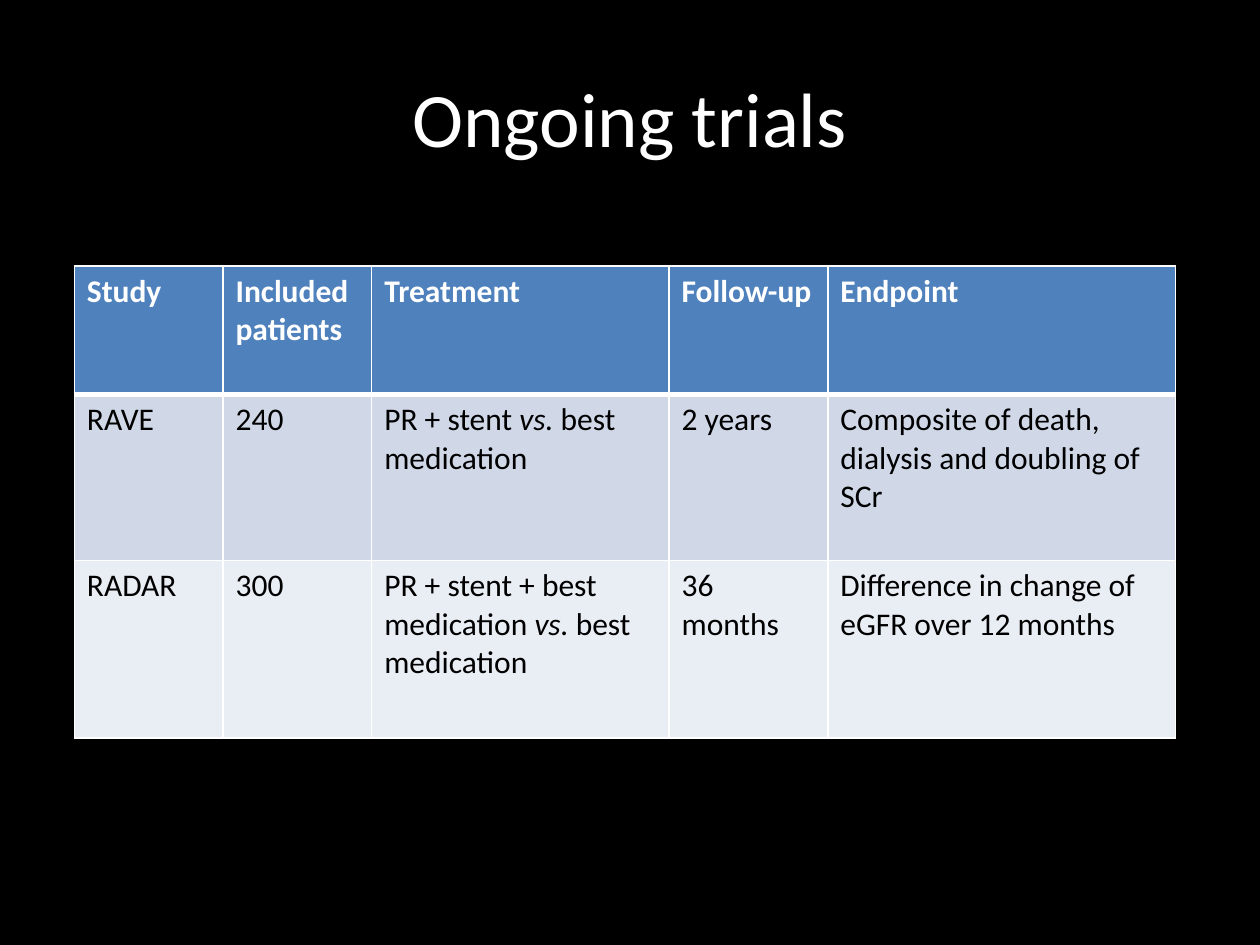
from lxml.etree import SubElement as Sub
from pptx import Presentation
from pptx.dml.color import RGBColor
from pptx.enum.text import MSO_ANCHOR as Anchor, PP_ALIGN as Align
from pptx.oxml.ns import qn
from pptx.util import Inches, Pt


def paint(fill, tone):
    fill.solid()
    fill.fore_color.rgb = RGBColor.from_string(tone)


def add_run(para, text, size, tone, bold=False, slant=False):
    run = para.add_run()
    run.text = text
    font = run.font
    font.name, font.size = "Calibri", Pt(size)
    font.bold, font.italic = bold, slant
    paint(font.fill, tone)


deck = Presentation()
deck.slide_width, deck.slide_height = Inches(10), Inches(7.5)
slide = deck.slides.add_slide(deck.slide_layouts[5])
paint(slide.background.fill, "000000")

title = slide.shapes.title
title.left, title.top = Inches(0.5), Inches(0.3)
title.width, title.height = Inches(9), Inches(1.25)
title.text_frame.vertical_anchor = Anchor.MIDDLE
head = title.text_frame.paragraphs[0]
head.alignment = Align.CENTER
add_run(head, "Ongoing trials", 44, "FFFFFF")

# Each cell is a list of runs; odd runs are italic.
rows = [
    [["Study"], ["Included patients"], ["Treatment"], ["Follow-up"], ["Endpoint"]],
    [["RAVE"], ["240"], ["PR + stent ", "vs.", " best medication"], ["2 years"],
     ["Composite of death, dialysis and doubling of SCr"]],
    [["RADAR"], ["300"],
     ["PR + stent + best medication ", "vs. ", "best medication"], ["36 months"],
     ["Difference in change of eGFR over 12 months"]],
]
wides = [1.18, 1.18, 2.36, 1.26, 2.76]
highs = [1.02, 1.32, 1.41]
fills = ["4F81BD", "D0D8E8", "E9EDF4"]

table = slide.shapes.add_table(
    len(rows), len(wides), Inches(0.59), Inches(2.11),
    Inches(sum(wides)), Inches(sum(highs))).table
for col, wide in zip(table.columns, wides):
    col.width = Inches(wide)
for row, high in zip(table.rows, highs):
    row.height = Inches(high)

for r, row in enumerate(rows):
    for c, parts in enumerate(row):
        cell = table.cell(r, c)
        para = cell.text_frame.paragraphs[0]
        for n, part in enumerate(parts):
            add_run(para, part, 18, "000000" if r else "FFFFFF",
                    bold=r == 0, slant=n % 2 == 1)
        props = cell._tc.get_or_add_tcPr()
        for side in "LRTB":
            thick = (r, side) in [(0, "B"), (1, "T")]
            line = Sub(props, qn("a:ln" + side), w=str(Pt(3 if thick else 1)))
            Sub(Sub(line, qn("a:solidFill")), qn("a:srgbClr"), val="FFFFFF")
        paint(cell.fill, fills[r])

deck.save("out.pptx")
